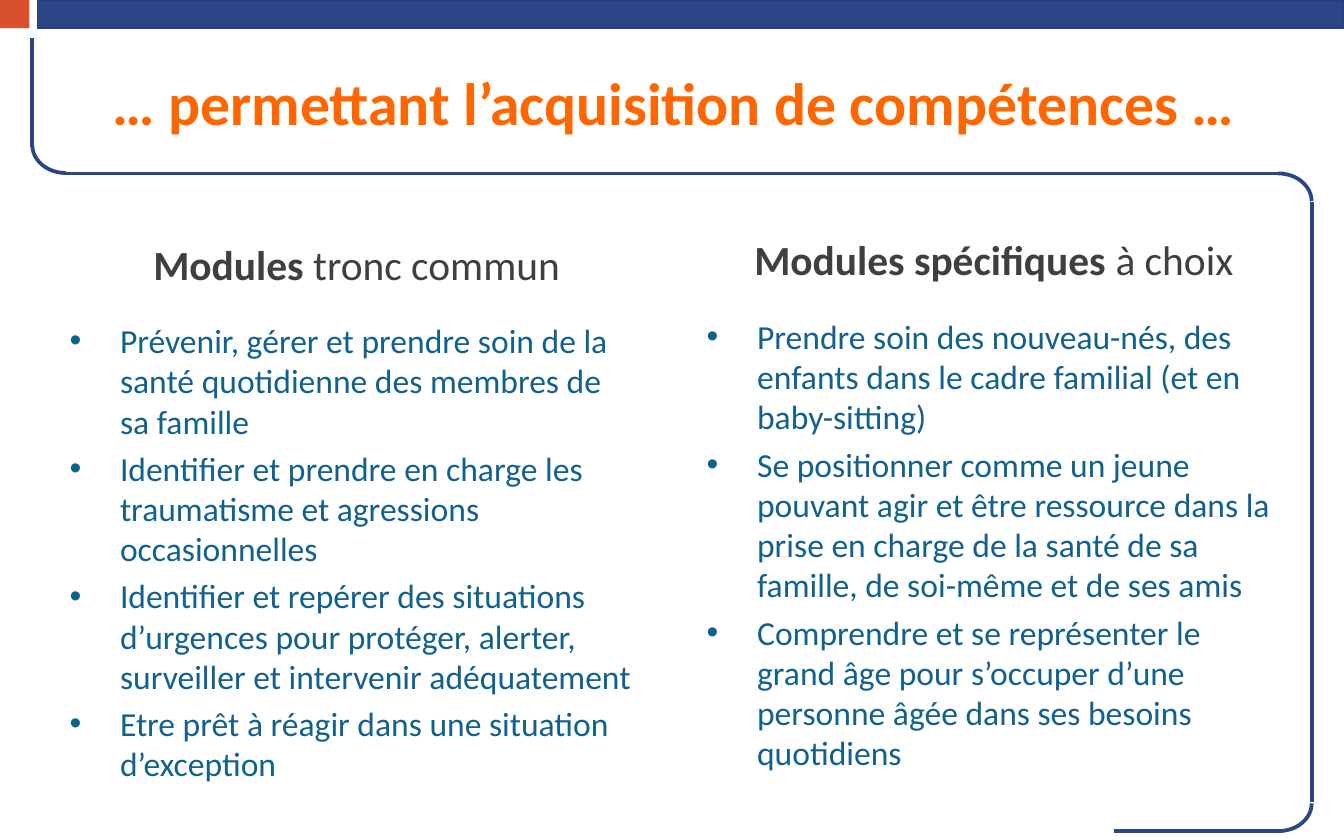
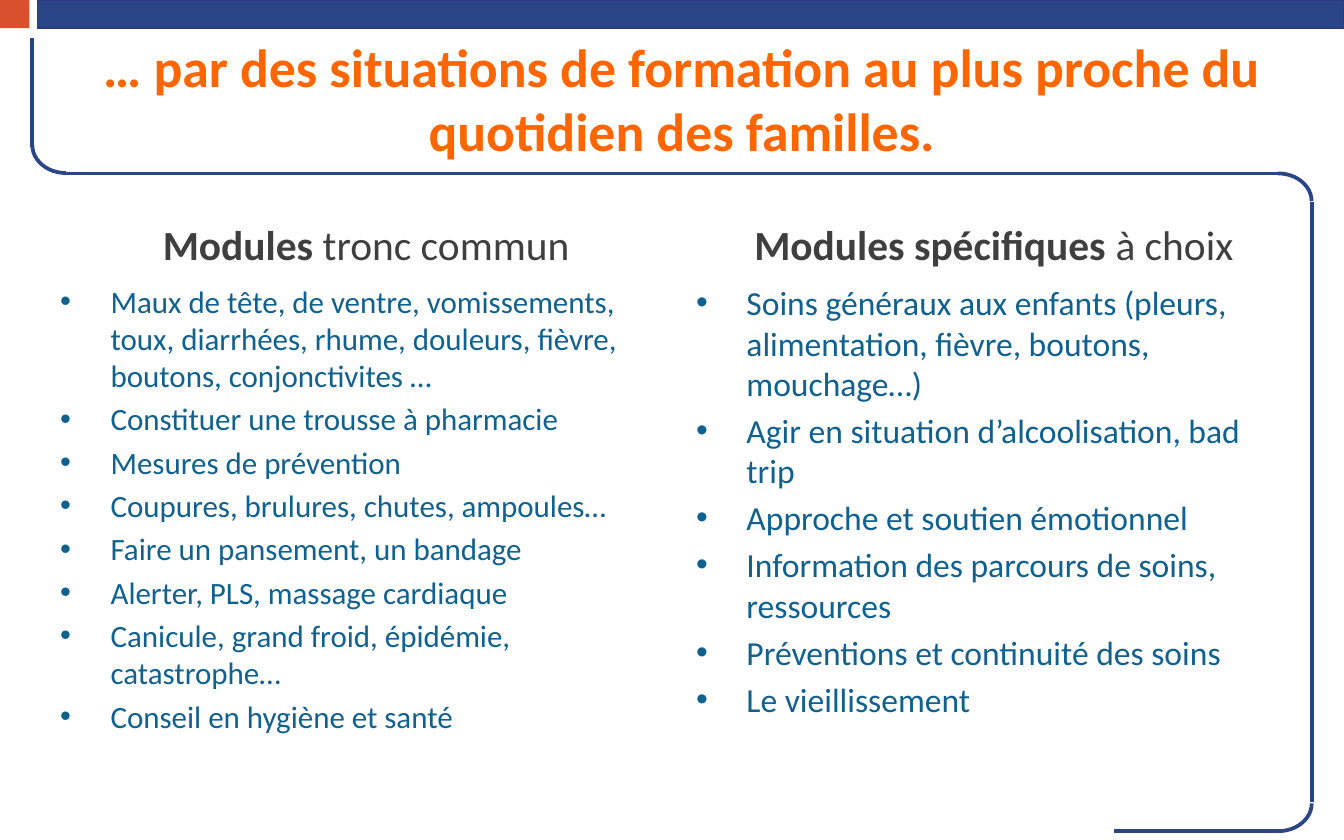
from lxml.etree import SubElement
from pptx import Presentation
from pptx.dml.color import RGBColor
from pptx.enum.shapes import MSO_CONNECTOR, MSO_SHAPE
from pptx.enum.text import MSO_ANCHOR, MSO_AUTO_SIZE, PP_ALIGN
from pptx.oxml.ns import qn
from pptx.util import Pt

NAVY = RGBColor(0x2B, 0x46, 0x87)
NAVY_EDGE = RGBColor(0x2E, 0x38, 0x83)
RED = RGBColor(0xD8, 0x51, 0x2C)
ORANGE = RGBColor(0xFF, 0x66, 0x00)
GREY = RGBColor(0x3F, 0x3F, 0x3F)
BLUE = RGBColor(0x11, 0x61, 0x8F)
WHITE = RGBColor(0xFF, 0xFF, 0xFF)
FONT = "Calibri"
WIDTH, HEIGHT = 720, 450
HEADING_SIZE = 22.2
HEADING_HEIGHT = 30.2
HEADING_INDENT = 3.6
BULLET_INDENT = 27
SPACE_RATIO = 0.2

COMMON = ("Modules ", "tronc commun")
SPECIFIC = ("Modules spécifiques ", "à choix")

SLIDES = [
    {
        "title": "… permettant l’acquisition de compétences …",
        "title_box": (31, 19.4, 660, 70.6),
        "title_size": 32,
        "columns": [
            {
                "heading": COMMON,
                "heading_box": (30.2, 128.2, 318.2, HEADING_HEIGHT),
                "list_box": (30.2, 167.8, 318.2, 245.5),
                "size": 18,
                "items": [
                    "Prévenir, gérer et prendre soin de la santé quotidienne des membres de sa famille",
                    "Identifier et prendre en charge les traumatisme et agressions occasionnelles",
                    "Identifier et repérer des situations d’urgences pour protéger, alerter, "
                    "surveiller et intervenir adéquatement",
                    "Etre prêt à réagir dans une situation d’exception",
                ],
            },
            {
                "heading": SPECIFIC,
                "heading_box": (371.5, 125.3, 318.2, HEADING_HEIGHT),
                "list_box": (371.5, 165.6, 318.2, 245.5),
                "size": 18,
                "items": [
                    "Prendre soin des nouveau-nés, des enfants dans le cadre familial (et en baby-sitting)",
                    "Se positionner comme un jeune pouvant agir et être ressource dans la prise "
                    "en charge de la santé de sa famille, de soi-même et de ses amis",
                    "Comprendre et se représenter le grand âge pour s’occuper d’une personne "
                    "âgée dans ses besoins quotidiens",
                ],
            },
        ],
    },
    {
        "title": "… par des situations de formation au plus proche du quotidien des familles.",
        "title_box": (35.3, 17.3, 660, 70.6),
        "title_size": 28.8,
        "columns": [
            {
                "heading": COMMON,
                "heading_box": (35.3, 117.4, 318.2, HEADING_HEIGHT),
                "list_box": (25.2, 147.6, 328.3, 254.9),
                "size": 16.6,
                "items": [
                    "Maux de tête, de ventre, vomissements, toux, diarrhées, rhume, douleurs, "
                    "fièvre, boutons, conjonctivites …",
                    "Constituer une trousse à pharmacie",
                    "Mesures de prévention",
                    "Coupures, brulures, chutes, ampoules…",
                    "Faire un pansement, un bandage",
                    "Alerter, PLS, massage cardiaque",
                    "Canicule, grand froid, épidémie, catastrophe…",
                    "Conseil en hygiène et santé",
                ],
            },
            {
                "heading": SPECIFIC,
                "heading_box": (371.5, 117.4, 318.2, HEADING_HEIGHT),
                "list_box": (365.8, 147.6, 324, 254.9),
                "size": 18,
                "items": [
                    "Soins généraux aux enfants (pleurs, alimentation, fièvre, boutons, mouchage…)",
                    "Agir en situation d’alcoolisation, bad trip",
                    "Approche et soutien émotionnel",
                    "Information des parcours de soins, ressources",
                    "Préventions et continuité des soins",
                    "Le vieillissement",
                ],
            },
        ],
    },
]

BANDS = [
    ((0, 0, 15.8, 15.1), RED, None),
    ((20.2, 0, WIDTH - 20.2, 15.1), NAVY, NAVY_EDGE),
]
FRAME_LINES = [
    (17.3, 20.2, 17.3, 78.5),
    (702.7, 429.8, 702.7, 108),
    (35.3, 92.9, 685.4, 92.9),
    (596.9, 445, 685.4, 445),
]
FRAME_CORNERS = [
    ((17.3, 62.9, 36, 29.8), 180),
    ((666.7, 92.9, 36, 29.8), 0),
    ((669.8, 412.4, 29.8, 36), 90),
]


def points(values):
    return [Pt(value) for value in values]


def style_line(line, color, width):
    line.color.rgb = color
    line.width = Pt(width)


def style_font(font, size, color, bold=False):
    font.name = FONT
    font.size = Pt(size)
    font.color.rgb = color
    font.bold = bold


def add_bands(slide):
    for box, fill, edge in BANDS:
        band = slide.shapes.add_shape(MSO_SHAPE.RECTANGLE, *points(box))
        band.shadow.inherit = False
        band.fill.solid()
        band.fill.fore_color.rgb = fill
        if edge is None:
            band.line.fill.background()
        else:
            style_line(band.line, edge, 0.75)


def add_frame(slide):
    for ends in FRAME_LINES:
        line = slide.shapes.add_connector(MSO_CONNECTOR.STRAIGHT, *points(ends))
        style_line(line.line, NAVY, 2)
        SubElement(line._element.spPr, qn("a:effectLst"))
    for box, rotation in FRAME_CORNERS:
        corner = slide.shapes.add_shape(MSO_SHAPE.ARC, *points(box))
        corner.shadow.inherit = False
        corner.fill.background()
        corner.rotation = rotation
        style_line(corner.line, NAVY, 2)


def set_title(slide, text, box, size):
    title = slide.shapes.title
    title.left, title.top, title.width, title.height = points(box)
    text_frame = title.text_frame
    text_frame.text = text
    text_frame.word_wrap = True
    text_frame.auto_size = MSO_AUTO_SIZE.NONE
    text_frame.vertical_anchor = MSO_ANCHOR.MIDDLE
    paragraph = text_frame.paragraphs[0]
    paragraph.alignment = PP_ALIGN.CENTER
    style_font(paragraph.runs[0].font, size, ORANGE, True)


def add_text_frame(slide, box, anchor):
    shape = slide.shapes.add_textbox(*points(box))
    shape.fill.solid()
    shape.fill.fore_color.rgb = WHITE
    text_frame = shape.text_frame
    text_frame.word_wrap = True
    text_frame.vertical_anchor = anchor
    return text_frame


def add_heading(slide, parts, box):
    paragraph = add_text_frame(slide, box, MSO_ANCHOR.BOTTOM).paragraphs[0]
    paragraph.alignment = PP_ALIGN.CENTER
    paragraph._p.get_or_add_pPr().set("marL", str(Pt(HEADING_INDENT)))
    for text, bold in zip(parts, (True, False)):
        run = paragraph.add_run()
        run.text = text
        style_font(run.font, HEADING_SIZE, GREY, bold)


def add_bullet(paragraph):
    properties = paragraph._p.get_or_add_pPr()
    properties.set("marL", str(Pt(BULLET_INDENT)))
    properties.set("indent", str(-Pt(BULLET_INDENT)))
    SubElement(properties, qn("a:buFont")).set("typeface", "Arial")
    SubElement(properties, qn("a:buChar")).set("char", "•")


def add_list(slide, items, box, size):
    text_frame = add_text_frame(slide, box, MSO_ANCHOR.TOP)
    text_frame.text = "\n".join(items)
    for index, paragraph in enumerate(text_frame.paragraphs):
        add_bullet(paragraph)
        if index:
            paragraph.space_before = Pt(round(size * SPACE_RATIO, 1))
        style_font(paragraph.runs[0].font, size, BLUE)


def main():
    presentation = Presentation()
    presentation.slide_width, presentation.slide_height = Pt(WIDTH), Pt(HEIGHT)
    for content in SLIDES:
        slide = presentation.slides.add_slide(presentation.slide_layouts[5])
        add_bands(slide)
        add_frame(slide)
        set_title(slide, content["title"], content["title_box"], content["title_size"])
        for column in content["columns"]:
            add_heading(slide, column["heading"], column["heading_box"])
        for column in content["columns"]:
            add_list(slide, column["items"], column["list_box"], column["size"])
    presentation.save("out.pptx")


if __name__ == "__main__":
    main()
